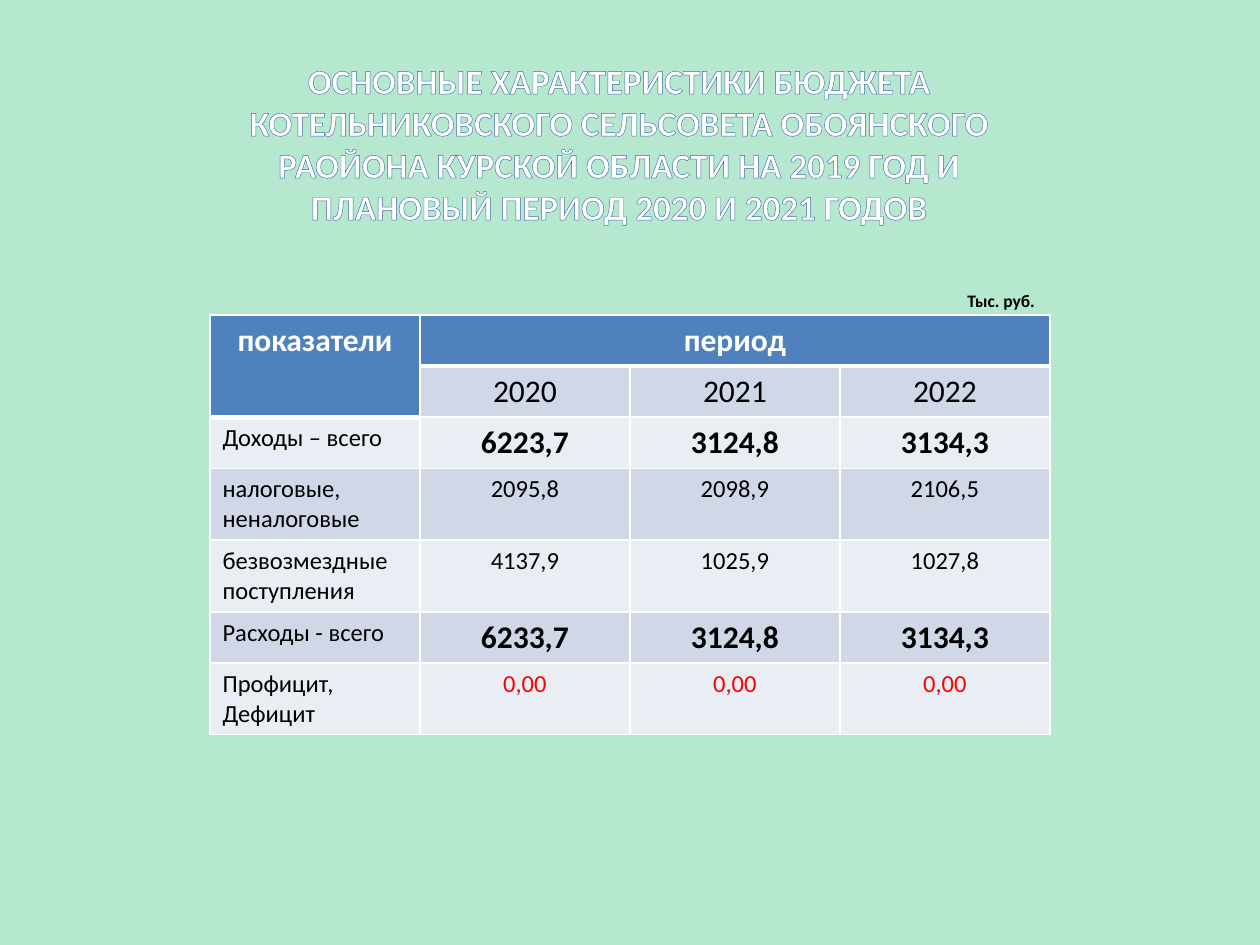
"""Build a slide with the main figures of a municipal budget."""
from dataclasses import dataclass

import lxml.etree
import pptx
import pptx.dml.color
import pptx.enum.text
import pptx.oxml.ns
import pptx.util

Inches = pptx.util.Inches
Pt = pptx.util.Pt
ALIGN = pptx.enum.text.PP_ALIGN
FONT = "Calibri"
WHITE, BLACK, RED = "FFFFFF", "000000", "FF0000"
HEADER, BANDS = "4F81BD", ("E9EDF4", "D0D8E8")
SLIDE_WIDTH, TABLE_WIDTH = 10, 20 / 3
ONE_LINE, TWO_LINES = 7.3 / 18, 0.57


@dataclass
class Style:
    size: float
    color: str = BLACK
    bold: bool = False


@dataclass
class BudgetRow:
    label: str
    values: tuple[str, ...]
    label_style: Style
    value_style: Style
    height: float = ONE_LINE


HEAD = Style(18, WHITE, True)
YEAR = Style(18)
TOTAL = Style(18, bold=True)
BODY = Style(14)
ZERO = Style(14, RED)

ROWS = [
    BudgetRow("показатели", ("период", "", ""), HEAD, HEAD),
    BudgetRow("", ("2020", "2021", "2022"), HEAD, YEAR),
    BudgetRow("Доходы – всего", ("6223,7", "3124,8", "3134,3"), BODY, TOTAL),
    BudgetRow("налоговые, неналоговые", ("2095,8", "2098,9", "2106,5"), BODY, BODY, TWO_LINES),
    BudgetRow("безвозмездные поступления", ("4137,9", "1025,9", "1027,8"), BODY, BODY, TWO_LINES),
    BudgetRow("Расходы - всего", ("6233,7", "3124,8", "3134,3"), BODY, TOTAL),
    BudgetRow("Профицит,\nДефицит", ("0,00", "0,00", "0,00"), BODY, ZERO, TWO_LINES),
]


def rgb(value: str) -> pptx.dml.color.RGBColor:
    """Turn a hex string into a colour."""
    return pptx.dml.color.RGBColor.from_string(value)


def make_line(tag: str, color: str, width: float):
    """Return a solid line element with the given tag."""
    ln = lxml.etree.Element(pptx.oxml.ns.qn(tag), w=str(Pt(width)))
    fill = lxml.etree.SubElement(ln, pptx.oxml.ns.qn("a:solidFill"))
    lxml.etree.SubElement(fill, pptx.oxml.ns.qn("a:srgbClr"), val=color)
    return ln


def write(tf, text: str, style: Style, align=ALIGN.LEFT) -> None:
    """Write each line of the text as a paragraph with one run."""
    for i, line in enumerate(text.split("\n")):
        p = tf.add_paragraph() if i else tf.paragraphs[0]
        p.alignment = align
        r = p.add_run()
        r.text = line
        r.font.name = FONT
        r.font.size = Pt(style.size)
        r.font.bold = style.bold
        r.font.color.rgb = rgb(style.color)


def add_text(s, box: tuple[float, ...], text: str, style: Style, align=ALIGN.LEFT):
    """Add a wrapping text box and return its text frame."""
    tf = s.shapes.add_textbox(*map(Inches, box)).text_frame
    tf.word_wrap = True
    write(tf, text, style, align)
    return tf


def format_cell(cell, row: int, col: int) -> None:
    """Fill a cell and draw its borders, thick below the header."""
    header_rows = 1 if col else 2
    cell.fill.solid()
    cell.fill.fore_color.rgb = rgb(HEADER if row < header_rows else BANDS[row % 2])
    top = 3 if row == header_rows else 1
    bottom = 3 if row < header_rows else 1
    widths = {"a:lnL": 1, "a:lnR": 1, "a:lnT": top, "a:lnB": bottom}
    for i, (tag, width) in enumerate(widths.items()):
        cell._tc.get_or_add_tcPr().insert(i, make_line(tag, WHITE, width))


def add_budget_table(s, rows: list[BudgetRow]) -> None:
    """Add the table of indicators by year, centred on the slide."""
    left = (SLIDE_WIDTH - TABLE_WIDTH) / 2
    box = left, 2.5, TABLE_WIDTH, sum(row.height for row in rows)
    table = s.shapes.add_table(len(rows), 4, *map(Inches, box)).table
    for i, row in enumerate(rows):
        table.rows[i].height = Inches(row.height)
        for j, text in enumerate((row.label, *row.values)):
            cell = table.cell(i, j)
            format_cell(cell, i, j)
            if text:
                style = row.value_style if j else row.label_style
                align = ALIGN.CENTER if j or i == 0 else ALIGN.LEFT
                write(cell.text_frame, text, style, align)
    table.cell(0, 0).merge(table.cell(1, 0))
    table.cell(0, 1).merge(table.cell(0, 3))


def main() -> None:
    """Build and save the slide."""
    prs = pptx.Presentation()
    prs.slide_width, prs.slide_height = Inches(SLIDE_WIDTH), Inches(7.5)
    s = prs.slides.add_slide(prs.slide_layouts[6])
    s.background.fill.solid()
    s.background.fill.fore_color.rgb = rgb("B5E8CE")
    title = add_text(
        s, (1.5, 0.42, 6.83, 1.45),
        "ОСНОВНЫЕ ХАРАКТЕРИСТИКИ БЮДЖЕТА КОТЕЛЬНИКОВСКОГО СЕЛЬСОВЕТА ОБОЯНСКОГО "
        "РАОЙОНА КУРСКОЙ ОБЛАСТИ НА 2019 ГОД И ПЛАНОВЫЙ ПЕРИОД 2020 И 2021 ГОДОВ",
        Style(20, WHITE, True), ALIGN.CENTER)
    r = title.paragraphs[0].runs[0]
    r._r.get_or_add_rPr().insert(0, make_line("a:ln", "3F6AA8", 2.48))
    add_budget_table(s, ROWS)
    add_text(s, (7.58, 2.25, 1.08, 0.27), "Тыс. руб.", Style(10, bold=True))
    prs.save("out.pptx")


if __name__ == "__main__":
    main()
